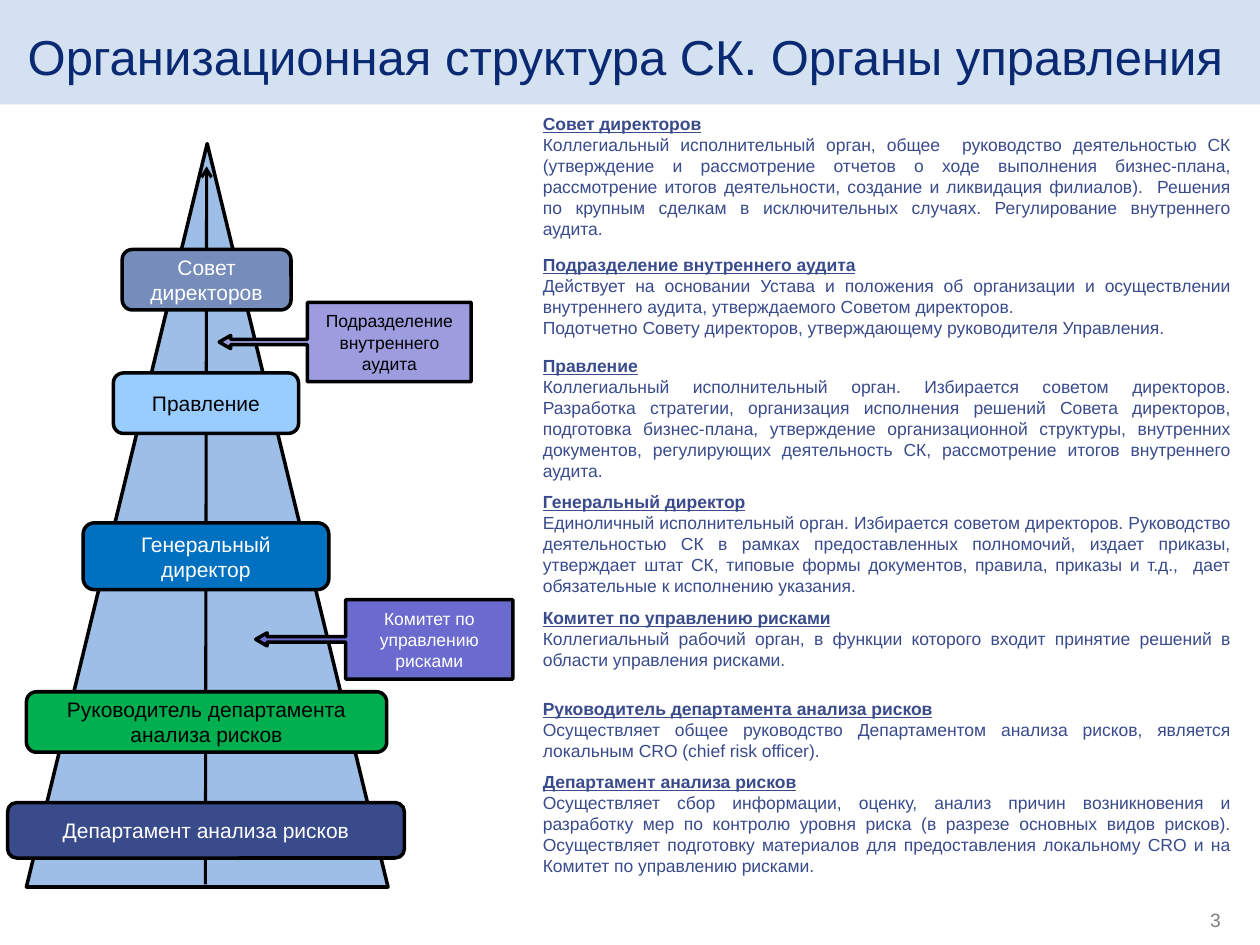
from dataclasses import dataclass

from lxml.etree import SubElement
from pptx import Presentation
from pptx.dml.color import RGBColor as RGB
from pptx.enum.shapes import MSO_CONNECTOR as Connector, MSO_SHAPE as Preset
from pptx.enum.text import MSO_ANCHOR as Anchor, MSO_AUTO_SIZE as AutoSize, PP_ALIGN as Align
from pptx.oxml.ns import qn
from pptx.util import Inches, Pt


@dataclass(frozen=True)
class Theme:
    font: str = "Arial"
    title_size: int = 28
    level_size: int = 12
    body_size: int = 10
    number_size: int = 11
    outline_width: float = 2
    axis_width: float = 1.75
    banner: str = "D4E1F0"
    title: str = "0A2973"
    pyramid: str = "9DBEE7"
    navy: str = "3A4B8C"
    board: str = "768DBC"
    management: str = "99CCFF"
    director: str = "0070C0"
    risk_head: str = "00B050"
    audit: str = "9C9CDF"
    committee: str = "6B6BCF"
    black: str = "000000"
    white: str = "FFFFFF"
    grey: str = "808080"


class SlideBuilder:
    def __init__(self, slide, theme):
        self.slide = slide
        self.theme = theme

    def style(self, paragraph, size, color, align=Align.LEFT, heading=False):
        paragraph.alignment = align
        font = paragraph.font
        font.name = self.theme.font
        font.size = Pt(size)
        font.color.rgb = RGB.from_string(color)
        font.bold = heading
        font.underline = heading

    def clear_insets(self, frame):
        frame.margin_left = frame.margin_right = 0
        frame.margin_top = frame.margin_bottom = 0

    def title(self, text, box):
        heading = self.slide.shapes.title
        heading.left, heading.top, heading.width, heading.height = map(Inches, box)
        frame = heading.text_frame
        frame.text = text
        frame.word_wrap = True
        frame.auto_size = AutoSize.NONE
        frame.vertical_anchor = Anchor.MIDDLE
        self.clear_insets(frame)
        self.style(frame.paragraphs[0], self.theme.title_size, self.theme.title)

    def shape(self, preset, box, fill, outlined=True):
        figure = self.slide.shapes.add_shape(preset, *map(Inches, box))
        figure.shadow.inherit = False
        figure.fill.solid()
        figure.fill.fore_color.rgb = RGB.from_string(fill)
        if outlined:
            figure.line.color.rgb = RGB.from_string(self.theme.black)
            figure.line.width = Pt(self.theme.outline_width)
        else:
            figure.line.fill.background()
        return figure

    def banner(self, box):
        band = self.shape(Preset.RECTANGLE, box, self.theme.banner, outlined=False)
        self.slide.shapes._spTree.insert(2, band._element)

    def label(self, figure, text, size, color):
        frame = figure.text_frame
        frame.text = text
        frame.word_wrap = True
        frame.vertical_anchor = Anchor.MIDDLE
        self.style(frame.paragraphs[0], size, color, Align.CENTER)

    def level(self, text, box, fill, color, preset=Preset.ROUNDED_RECTANGLE):
        self.label(self.shape(preset, box, fill), text, self.theme.level_size, color)

    def callout(self, text, box, fill, color):
        figure = self.shape(Preset.LEFT_ARROW_CALLOUT, box, fill)
        for index, value in enumerate((0.068, 0.083, 0.144, 0.65)):
            figure.adjustments[index] = value
        self.label(figure, text, self.theme.body_size, color)

    def arrow(self, start, end):
        axis = self.slide.shapes.add_connector(Connector.STRAIGHT, *map(Inches, start + end))
        axis.line.color.rgb = RGB.from_string(self.theme.black)
        axis.line.width = Pt(self.theme.axis_width)
        SubElement(axis.line._get_or_add_ln(), qn("a:tailEnd"), type="arrow")
        SubElement(axis._element.spPr, qn("a:effectLst"))

    def description(self, heading, details, box):
        frame = self.slide.shapes.add_textbox(*map(Inches, box)).text_frame
        frame.word_wrap = True
        frame.auto_size = AutoSize.SHAPE_TO_FIT_TEXT
        frame.text = "\n".join((heading, *details))
        for index, paragraph in enumerate(frame.paragraphs):
            align = Align.JUSTIFY if index else Align.LEFT
            self.style(paragraph, self.theme.body_size, self.theme.navy, align, index == 0)

    def number(self, text, box):
        frame = self.slide.shapes.add_textbox(*map(Inches, box)).text_frame
        frame.text = text
        frame.word_wrap = True
        self.clear_insets(frame)
        self.style(frame.paragraphs[0], self.theme.number_size, self.theme.grey, Align.RIGHT)


def main():
    deck = Presentation()
    deck.slide_width, deck.slide_height = Inches(10), Inches(7.5)
    theme = Theme()
    page = SlideBuilder(deck.slides.add_slide(deck.slide_layouts[5]), theme)

    page.banner((0, 0, 10, 0.83))
    page.title("Организационная структура СК. Органы управления", (0.22, 0.19, 9.64, 0.51))
    page.shape(Preset.ISOSCELES_TRIANGLE, (0.21, 1.14, 2.87, 5.9), theme.pyramid)
    page.arrow((1.63, 7.02), (1.64, 1.32))

    levels = [
        ("Совет директоров", (0.97, 1.98, 1.34, 0.48), theme.board, theme.white),
        ("Правление", (0.9, 2.96, 1.47, 0.48), theme.management, theme.black),
        ("Генеральный директор", (0.66, 4.15, 1.95, 0.53), theme.director, theme.white),
        ("Руководитель департамента анализа рисков", (0.21, 5.49, 2.86, 0.48),
         theme.risk_head, theme.black),
        ("Департамент анализа рисков", (0.06, 6.37, 3.15, 0.44), theme.navy, theme.white,
         Preset.FLOWCHART_ALTERNATE_PROCESS),
    ]
    for level in levels:
        page.level(*level)

    page.callout("Подразделение внутреннего аудита", (1.74, 2.4, 2, 0.63),
                 theme.audit, theme.black)
    page.callout("Комитет по управлению рисками", (2.03, 4.76, 2.04, 0.63),
                 theme.committee, theme.white)

    descriptions = [
        (0.85, 1.11, "Совет директоров", [
            "Коллегиальный исполнительный орган, общее  руководство деятельностью СК "
            "(утверждение и рассмотрение отчетов о ходе выполнения бизнес-плана, "
            "рассмотрение итогов деятельности, создание и ликвидация филиалов).  Решения "
            "по крупным сделкам в исключительных случаях. Регулирование внутреннего аудита."]),
        (1.97, 0.77, "Подразделение внутреннего аудита", [
            "Действует на основании Устава и положения об организации и осуществлении "
            "внутреннего аудита, утверждаемого Советом директоров.",
            "Подотчетно Совету директоров, утверждающему руководителя Управления."]),
        (2.77, 1.11, "Правление", [
            "Коллегиальный исполнительный орган. Избирается советом директоров. "
            "Разработка стратегии, организация исполнения решений Совета директоров, "
            "подготовка бизнес-плана, утверждение организационной структуры, внутренних "
            "документов, регулирующих деятельность СК, рассмотрение итогов внутреннего аудита."]),
        (3.85, 0.94, "Генеральный директор", [
            "Единоличный исполнительный орган. Избирается советом директоров. Руководство "
            "деятельностью СК в рамках предоставленных полномочий, издает приказы, "
            "утверждает штат СК, типовые формы документов, правила, приказы и т.д.,  дает "
            "обязательные к исполнению указания."]),
        (4.77, 0.61, "Комитет по управлению рисками", [
            "Коллегиальный рабочий орган, в функции которого входит принятие решений в "
            "области управления рисками."]),
        (5.49, 0.61, "Руководитель департамента анализа рисков", [
            "Осуществляет общее руководство Департаментом анализа рисков, является "
            "локальным CRO (chief risk officer)."]),
        (6.07, 0.94, "Департамент анализа рисков", [
            "Осуществляет сбор информации, оценку, анализ причин возникновения и "
            "разработку мер по контролю уровня риска (в разрезе основных видов рисков). "
            "Осуществляет подготовку материалов для предоставления локальному CRO и на "
            "Комитет по управлению рисками."]),
    ]
    for top, height, heading, details in descriptions:
        page.description(heading, details, (4.21, top, 5.65, height))

    page.number("3", (7.36, 7.21, 2.33, 0.31))
    deck.save("out.pptx")


if __name__ == "__main__":
    main()
